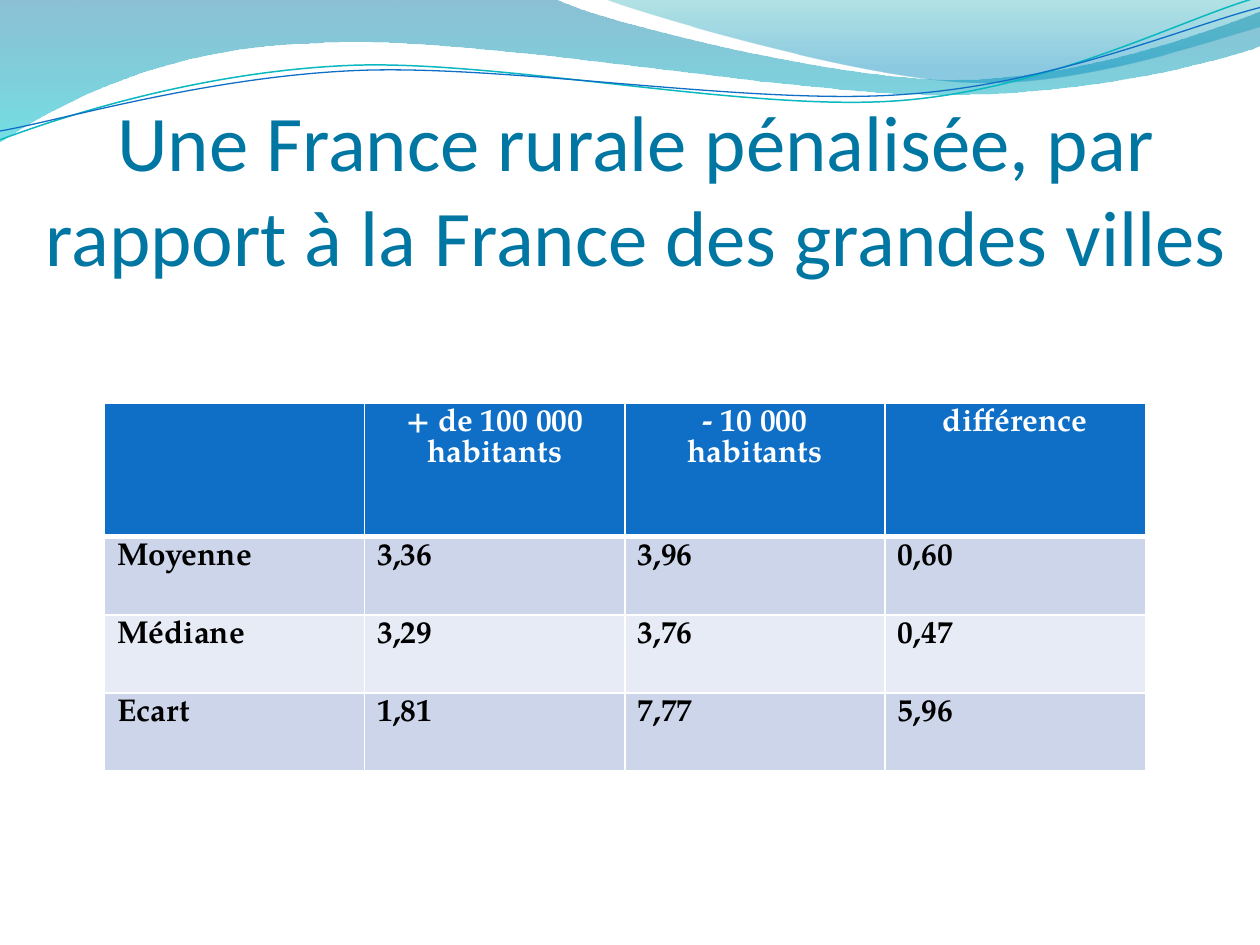
import pptx
import pptx.dml.color
import pptx.enum.text
import pptx.oxml.ns
import pptx.util
from lxml import etree
from pptx.util import Inches

COLORS = {
    "title": "0076A3", "header": "0F6FC6", "odd": "CCD5EA", "even": "E7EBF5",
    "white": "FFFFFF", "black": "000000", "teal_line": "0AB8BF",
    "wave_top": "0074A1", "wave_bottom": "00C6CF",
    "crest_top": "00A1A9", "crest_bottom": "008BBF",
}

# A two-number step is a straight line, a six-number step a cubic curve.
WAVE = [(0, 0), (4.4, -0.01), (4.76, 0.17, 6.64, 0.63, 7.58, 0.63),
        (8.53, 0.63, 9.58, 0.26, 10, 0.09), (10.01, 0.36),
        (9.83, 0.44, 8.7, 0.76, 7.46, 0.75), (6.22, 0.75, 3.82, 0.28, 2.57, 0.34),
        (1.29, 0.36, 0.46, 0.83, -0.01, 1.13)]
CREST = [(4.79, -0.01), (5.09, 0.11, 6.82, 0.62, 7.69, 0.65),
         (8.56, 0.69, 9.61, 0.32, 10, 0.21), (10, 0)]
TEAL_CURVE = [(0, 1.11), (0.48, 0.93, 1.58, 0.57, 2.77, 0.52),
              (3.95, 0.47, 5.93, 0.89, 7.13, 0.8), (8.33, 0.71, 9.38, 0.15, 9.98, -0.02)]
BLUE_CURVE = [(0, 1.04), (0.47, 0.96, 1.64, 0.61, 2.83, 0.56),
              (4.03, 0.51, 5.97, 0.84, 7.17, 0.75), (8.36, 0.67, 9.41, 0.21, 10, 0.06)]

ROWS = [
    ["", "+ de 100 000 habitants", "- 10 000 habitants", "différence"],
    ["Moyenne", "3,36", "3,96", "0,60"],
    ["Médiane", "3,29", "3,76", "0,47"],
    ["Ecart", "1,81", "7,77", "5,96"],
]


def rgb(name):
    return pptx.dml.color.RGBColor.from_string(COLORS[name])


class SlideBuilder:
    """Holds the text style and the current slide."""
    title_font = "Calibri"
    table_font = "TeX Gyre Pagella"

    def __init__(self, presentation):
        self.slide = presentation.slides.add_slide(presentation.slide_layouts[6])

    def freeform(self, steps, closed):
        """Build the outline from step ends, then bend the curved segments."""
        ends = [(Inches(step[-2]), Inches(step[-1])) for step in steps]
        builder = self.slide.shapes.build_freeform(*ends[0])
        builder.add_line_segments(ends[1:], close=closed)
        shape = builder.convert_to_shape()
        shape.shadow.inherit = False
        segments = list(shape.element.spPr.iter(pptx.oxml.ns.qn("a:lnTo")))
        for segment, step in zip(segments, steps[1:]):
            if len(step) == 6:
                self.bend(segment, step, shape.left, shape.top)
        return shape

    def bend(self, segment, step, left, top):
        curve = etree.Element(pptx.oxml.ns.qn("a:cubicBezTo"))
        for x, y in zip(step[::2], step[1::2]):
            etree.SubElement(curve, pptx.oxml.ns.qn("a:pt"),
                             x=str(Inches(x) - left), y=str(Inches(y) - top))
        segment.getparent().replace(segment, curve)

    def gradient_area(self, steps, stops):
        """Each stop is position, colour name and opacity in percent."""
        shape = self.freeform(steps, True)
        shape.line.fill.background()
        shape.fill.gradient()
        shape.fill.gradient_angle = 270
        for stop, (position, color, opacity) in zip(shape.fill.gradient_stops, stops):
            stop.position = position
            stop.color.rgb = rgb(color)
        tag = pptx.oxml.ns.qn("a:srgbClr")
        for element, stop in zip(shape.element.spPr.iter(tag), stops):
            alpha = etree.SubElement(element, pptx.oxml.ns.qn("a:alpha"))
            alpha.set("val", str(stop[2] * 1000))

    def curve(self, steps, color, width):
        shape = self.freeform(steps, False)
        shape.fill.background()
        shape.line.color.rgb = rgb(color)
        shape.line.width = pptx.util.Pt(width)

    def style_runs(self, paragraph, font, size, color, bold=False):
        for run in paragraph.runs:
            run.font.name = font
            run.font.size = pptx.util.Pt(size)
            run.font.bold = bold
            run.font.color.rgb = rgb(color)

    def title(self, text, left, top, width, height):
        box = self.slide.shapes.add_textbox(
            Inches(left), Inches(top), Inches(width), Inches(height))
        frame = box.text_frame
        frame.word_wrap = True
        frame.vertical_anchor = pptx.enum.text.MSO_ANCHOR.BOTTOM
        frame.margin_left = frame.margin_right = frame.margin_bottom = 0
        frame.margin_top = Inches(0.05)
        frame.text = text
        paragraph = frame.paragraphs[0]
        paragraph.alignment = pptx.enum.text.PP_ALIGN.CENTER
        self.style_runs(paragraph, self.title_font, 45, "title")

    def borders(self, cell, widths):
        properties = cell._tc.get_or_add_tcPr()
        for index, (side, width) in enumerate(widths.items()):
            line = etree.Element(pptx.oxml.ns.qn("a:ln" + side), w=str(pptx.util.Pt(width)))
            fill = etree.SubElement(line, pptx.oxml.ns.qn("a:solidFill"))
            etree.SubElement(fill, pptx.oxml.ns.qn("a:srgbClr"), val=COLORS["white"])
            properties.insert(index, line)

    def cell(self, cell, text, row):
        header = row == 0
        cell.text = text
        cell.fill.solid()
        cell.fill.fore_color.rgb = rgb("header" if header else "odd" if row % 2 else "even")
        self.borders(cell, {"L": 1, "R": 1, "T": 3 if row == 1 else 1, "B": 3 if header else 1})
        paragraph = cell.text_frame.paragraphs[0]
        paragraph.line_spacing = pptx.util.Pt(17.5)
        if header:
            paragraph.alignment = pptx.enum.text.PP_ALIGN.CENTER
        self.style_runs(paragraph, self.table_font, 18, "white" if header else "black", True)

    def table(self, rows, left, top, width, heights):
        table = self.slide.shapes.add_table(
            len(rows), len(rows[0]), Inches(left), Inches(top),
            Inches(width), Inches(sum(heights))).table
        for row, (texts, height) in enumerate(zip(rows, heights)):
            table.rows[row].height = Inches(height)
            for column, text in enumerate(texts):
                self.cell(table.cell(row, column), text, row)


def main():
    presentation = pptx.Presentation()
    presentation.slide_width = Inches(10)
    presentation.slide_height = Inches(7.5)
    builder = SlideBuilder(presentation)
    builder.gradient_area(WAVE, [(0, "wave_top", 45), (1, "wave_bottom", 55)])
    builder.gradient_area(CREST, [(0, "crest_top", 30), (0.8, "crest_bottom", 45)])
    builder.curve(TEAL_CURVE, "teal_line", 0.85)
    builder.curve(BLUE_CURVE, "header", 0.75)
    builder.title("Une France rurale pénalisée, par rapport à la France des grandes villes",
                  0.2, 0.99, 9.69, 1.25)
    builder.table(ROWS, 0.83, 3.2, 8.26, [1.06] + [0.62] * 3)
    presentation.save("out.pptx")


if __name__ == "__main__":
    main()
